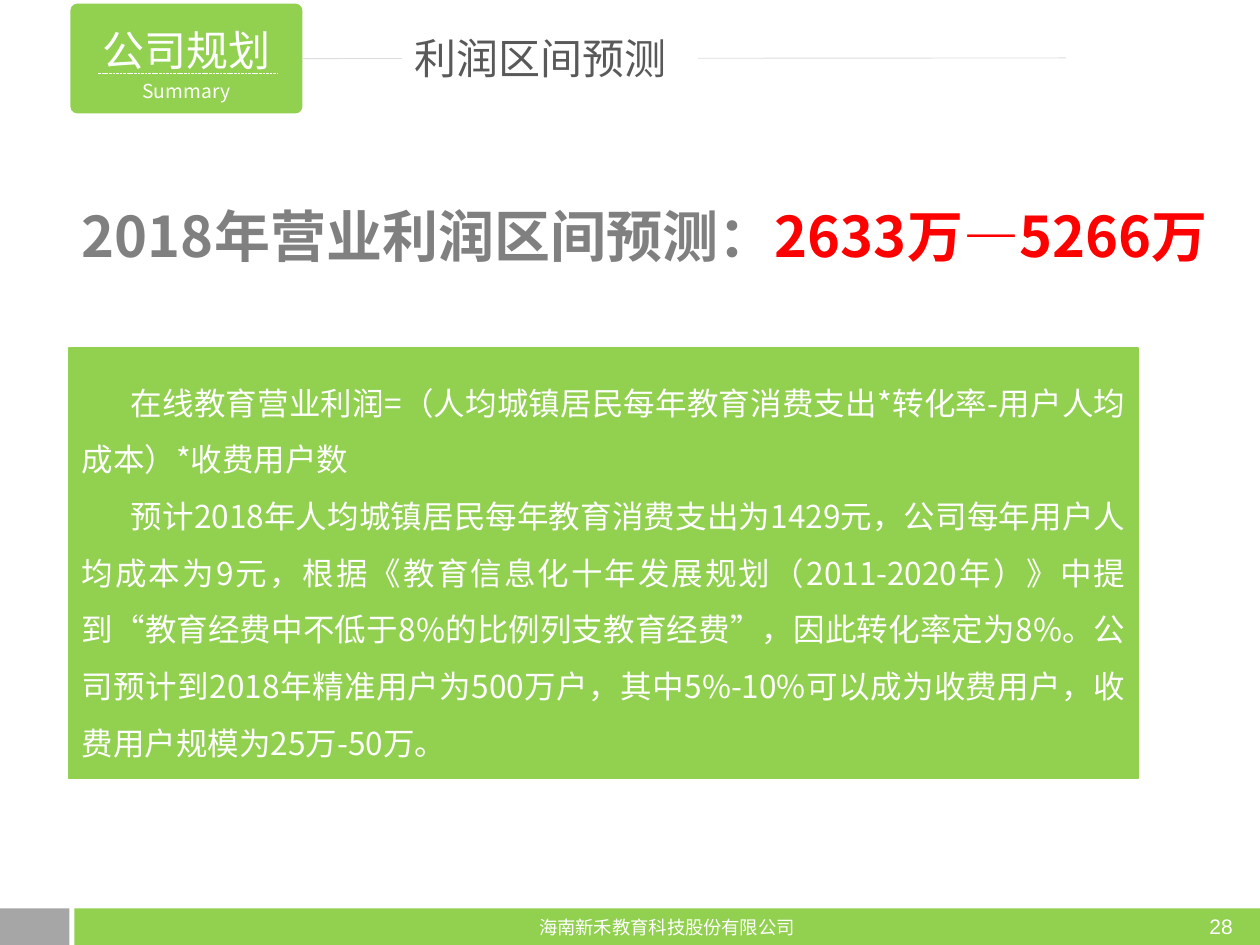
import pptx
import pptx.util
import pptx.dml.color
import pptx.enum.dml
import pptx.enum.shapes
import pptx.enum.text
import pptx.oxml
import pptx.oxml.ns

Inches = pptx.util.Inches
Pt = pptx.util.Pt
Align = pptx.enum.text.PP_ALIGN
Anchor = pptx.enum.text.MSO_ANCHOR
Shape = pptx.enum.shapes.MSO_SHAPE

COLORS = {
    "green": "92D050", "gray": "A6A6A6", "white": "FFFFFF", "rule": "DDDDDD",
    "title": "595959", "headline": "808080", "accent": "FF0000",
}
CJK_FONT = "Noto Sans CJK SC"


def rgb(name):
    return pptx.dml.color.RGBColor.from_string(COLORS[name])


class SlideBuilder:
    def __init__(self, page):
        self.page = page

    def shape(self, left, top, width, height, fill, kind=Shape.RECTANGLE):
        shape = self.page.shapes.add_shape(
            kind, Inches(left), Inches(top), Inches(width), Inches(height))
        shape.shadow.inherit = False
        shape.fill.solid()
        shape.fill.fore_color.rgb = rgb(fill)
        shape.line.fill.background()
        return shape

    def text_box(self, left, top, width, height):
        return self.page.shapes.add_textbox(
            Inches(left), Inches(top), Inches(width), Inches(height))

    def set_text(self, box, texts, size, color="white", font=CJK_FONT, bold=False,
                 align=Align.LEFT, anchor=Anchor.TOP, spacing=1, indent=0):
        """Put one paragraph per text into the box and return the paragraphs."""
        frame = box.text_frame
        frame.word_wrap = True
        frame.vertical_anchor = anchor
        for index, text in enumerate(texts):
            para = frame.add_paragraph() if index else frame.paragraphs[0]
            para.add_run().text = text
            para.alignment = align
            para.line_spacing = spacing
            if indent:
                para._p.get_or_add_pPr().set("indent", str(Inches(indent)))
            para.font.size = Pt(size)
            para.font.bold = bold
            para.font.color.rgb = rgb(color)
            para.font.name = font
            east_asian = pptx.oxml.parse_xml(
                f'<a:ea {pptx.oxml.ns.nsdecls("a")} typeface="{font}"/>')
            para.font._element.find(pptx.oxml.ns.qn("a:latin")).addnext(east_asian)
        return frame.paragraphs

    def line(self, start, end, color, dash=None):
        line = self.page.shapes.add_connector(
            pptx.enum.shapes.MSO_CONNECTOR.STRAIGHT,
            *(Inches(value) for value in start + end))
        line.line.color.rgb = rgb(color)
        line.line.width = Pt(0.5)
        if dash:
            line.line.dash_style = dash
        line._element.spPr.append(
            pptx.oxml.parse_xml(f'<a:effectLst {pptx.oxml.ns.nsdecls("a")}/>'))
        return line


def main():
    deck = pptx.Presentation()
    deck.slide_width, deck.slide_height = Inches(10), Inches(7.5)
    builder = SlideBuilder(deck.slides.add_slide(deck.slide_layouts[6]))

    footer = builder.shape(0.59, 7.21, 9.41, 0.29, "green")
    builder.set_text(footer, ["海南新禾教育科技股份有限公司"], 10.5,
                     align=Align.CENTER, anchor=Anchor.MIDDLE)
    builder.shape(0, 7.21, 0.55, 0.29, "gray")
    page_number = builder.text_box(9.5, 7.2, 0.48, 0.3)
    builder.set_text(page_number, ["28"], 12, font="Arial")

    badge = builder.shape(0.56, 0.03, 1.84, 0.87, "green", Shape.ROUNDED_RECTANGLE)
    badge.adjustments[0] = 0.06
    frame = badge.text_frame
    frame.margin_left = frame.margin_right = frame.margin_top = frame.margin_bottom = 0
    section, subtitle = builder.set_text(
        badge, ["公司规划", "Summary"], 24,
        align=Align.CENTER, anchor=Anchor.MIDDLE, spacing=1.2)
    subtitle.font.size = Pt(11)
    builder.line((0.78, 0.58), (2.2, 0.58), "white",
                 pptx.enum.dml.MSO_LINE.SQUARE_DOT)
    title_rule = builder.line((2.4, 0.46), (8.46, 0.46), "rule")
    title_rule.begin_connect(badge, 3)

    title = builder.shape(3.19, 0.21, 2.35, 0.5, "white")
    builder.set_text(title, ["利润区间预测"], 24, "title")

    panel = builder.shape(0.55, 2.76, 8.48, 3.42, "green")
    panel.line.color.rgb = rgb("green")
    panel.line.width = Pt(1)
    explanation = [
        "在线教育营业利润=（人均城镇居民每年教育消费支出*转化率-用户人均成本）*收费用户数",
        "预计2018年人均城镇居民每年教育消费支出为1429元，公司每年用户人均成本为9元，"
        "根据《教育信息化十年发展规划（2011-2020年）》中提到“教育经费中不低于8%的比例"
        "列支教育经费”，因此转化率定为8%。公司预计到2018年精准用户为500万户，"
        "其中5%-10%可以成为收费用户，收费用户规模为25万-50万。",
    ]
    builder.set_text(panel, explanation, 18, align=Align.JUSTIFY,
                     anchor=Anchor.MIDDLE, spacing=1.5, indent=0.39)

    headline = builder.text_box(0.55, 1.55, 9.45, 0.64)
    forecast = builder.set_text(headline, ["2018年营业利润区间预测："], 32,
                                "headline", bold=True)[0]
    profit_range = forecast.add_run()
    profit_range.text = "2633万—5266万"
    profit_range.font.color.rgb = rgb("accent")

    deck.save("out.pptx")


if __name__ == "__main__":
    main()
